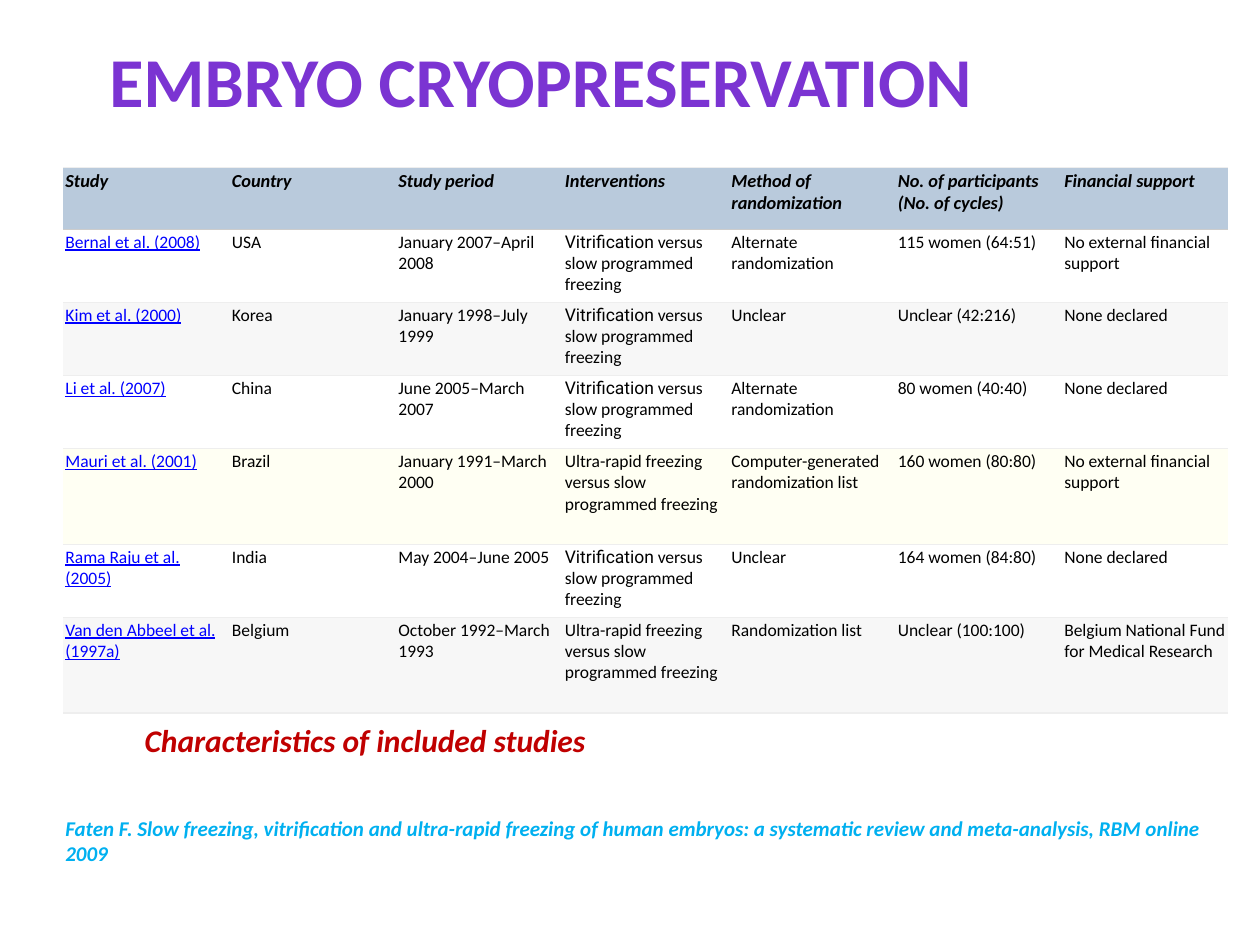
import lxml.etree
import pptx
import pptx.dml.color
import pptx.enum.text
import pptx.oxml.ns
import pptx.util
from pptx.util import Inches

HEADERS = ["Study", "Country", "Study period", "Interventions", "Method of randomization",
           "No. of participants (No. of cycles)", "Financial support"]
VITRIFICATION = "Vitrification versus slow programmed freezing"
ULTRA_RAPID = "Ultra-rapid freezing versus slow programmed freezing"
STUDIES = [
    ["Bernal et al. (2008)", "USA", "January 2007–April 2008", VITRIFICATION,
     "Alternate randomization", "115 women (64:51)", "No external financial support"],
    ["Kim et al. (2000)", "Korea", "January 1998–July 1999", VITRIFICATION,
     "Unclear", "Unclear (42:216)", "None declared"],
    ["Li et al. (2007)", "China", "June 2005–March 2007", VITRIFICATION,
     "Alternate randomization", "80 women (40:40)", "None declared"],
    ["Mauri et al. (2001)", "Brazil", "January 1991–March 2000", ULTRA_RAPID,
     "Computer-generated randomization list", "160 women (80:80)", "No external financial support"],
    ["Rama Raju et al. (2005)", "India", "May 2004–June 2005", VITRIFICATION,
     "Unclear", "164 women (84:80)", "None declared"],
    ["Van den Abbeel et al. (1997a)", "Belgium", "October 1992–March 1993", ULTRA_RAPID,
     "Randomization list", "Unclear (100:100)", "Belgium National Fund for Medical Research"],
]
ROW_HEIGHTS = [0.49, 0.58, 0.58, 0.58, 0.76, 0.58, 0.76]
ROW_FILLS = ["B9CADC", None, "F7F7F7", None, "FFFFF3", None, "F7F7F7"]


def color(value):
    """Return the colour for a hex string."""
    return pptx.dml.color.RGBColor.from_string(value)


def set_font(font, size, value, bold=False, italic=False):
    """Set the Calibri font used throughout the slide."""
    font.name = "Calibri"
    font.size = pptx.util.Pt(size)
    font.bold = bold
    font.italic = italic
    font.color.rgb = color(value)


def set_borders(cell, top, bottom):
    """Draw thin horizontal borders and leave the sides open."""
    properties = cell._tc.get_or_add_tcPr()
    sides = [("lnL", None), ("lnR", None), ("lnT", top), ("lnB", bottom)]
    for position, (tag, value) in enumerate(sides):
        line = lxml.etree.Element(pptx.oxml.ns.qn("a:" + tag), w=str(pptx.util.Pt(0.75)))
        if value:
            fill = lxml.etree.SubElement(line, pptx.oxml.ns.qn("a:solidFill"))
            lxml.etree.SubElement(fill, pptx.oxml.ns.qn("a:srgbClr"), val=value)
        else:
            lxml.etree.SubElement(line, pptx.oxml.ns.qn("a:noFill"))
        properties.insert(position, line)


def write_cell(cell, text, row, column):
    """Fill one table cell with its text and format."""
    cell.margin_left = cell.margin_right = Inches(0.02)
    cell.margin_top = cell.margin_bottom = Inches(0.02)
    if ROW_FILLS[row]:
        cell.fill.solid()
        cell.fill.fore_color.rgb = color(ROW_FILLS[row])
    else:
        cell.fill.background()
    set_borders(cell, "CCCCCC" if row == 1 else "EEEEEE", "CCCCCC" if row == 0 else "EEEEEE")
    paragraph = cell.text_frame.paragraphs[0]
    if row == 0:
        set_font(paragraph.font, 10.5, "000000", bold=True, italic=True)
    elif column == 0:
        set_font(paragraph.font, 10, "0000FF")
        paragraph.font.underline = True
    else:
        set_font(paragraph.font, 10, "000000")
    if text == VITRIFICATION:
        method, rest = text.split(" ", 1)
        run = paragraph.add_run()
        run.text = method
        run.font.name = "Roboto"
        paragraph.add_run().text = " " + rest
    else:
        paragraph.add_run().text = text


def add_studies_table(slide, left, top, width, height):
    """Add the table of included studies."""
    rows = [HEADERS] + STUDIES
    table = slide.shapes.add_table(len(rows), len(HEADERS), left, top, width, height).table
    table.first_row = False
    table.horz_banding = False
    for column in table.columns:
        column.width = int(width / len(HEADERS))
    for row, texts in enumerate(rows):
        table.rows[row].height = Inches(ROW_HEIGHTS[row])
        for column, text in enumerate(texts):
            write_cell(table.cell(row, column), text, row, column)


def add_title(slide, left, top, width, height):
    """Place and format the slide title."""
    title = slide.shapes.title
    title.left, title.top, title.width, title.height = left, top, width, height
    frame = title.text_frame
    frame.text = "EMBRYO CRYOPRESERVATION"
    frame.word_wrap = True
    frame.auto_size = pptx.enum.text.MSO_AUTO_SIZE.NONE
    frame.vertical_anchor = pptx.enum.text.MSO_ANCHOR.TOP
    paragraph = frame.paragraphs[0]
    paragraph.alignment = pptx.enum.text.PP_ALIGN.CENTER
    set_font(paragraph.font, 40, "7B34D2", bold=True)


def add_note(slide, left, top, width, height, text, size, value, wrap=True):
    """Add a bold italic line of text."""
    frame = slide.shapes.add_textbox(left, top, width, height).text_frame
    frame.word_wrap = wrap
    frame.text = text
    set_font(frame.paragraphs[0].font, size, value, bold=True, italic=True)


def main():
    """Build the slide and save it."""
    presentation = pptx.Presentation()
    presentation.slide_width = Inches(10)
    presentation.slide_height = Inches(7.5)
    slide = presentation.slides.add_slide(presentation.slide_layouts[5])
    add_title(slide, Inches(0.25), Inches(0.25), Inches(8.08), Inches(0.77))
    add_studies_table(slide, Inches(0.5), Inches(1.33), Inches(9.25), Inches(4.33))
    add_note(slide, Inches(1.05), Inches(5.67), Inches(3.8), Inches(0.4),
             "Characteristics of included studies", 18, "C00000", wrap=False)
    add_note(slide, Inches(0.42), Inches(6.42), Inches(9.33), Inches(0.5),
             "Faten F. Slow freezing, vitrification and ultra-rapid freezing of human embryos: "
             "a systematic review and meta-analysis, RBM online 2009", 12, "00B0F0")
    presentation.save("out.pptx")


if __name__ == "__main__":
    main()
